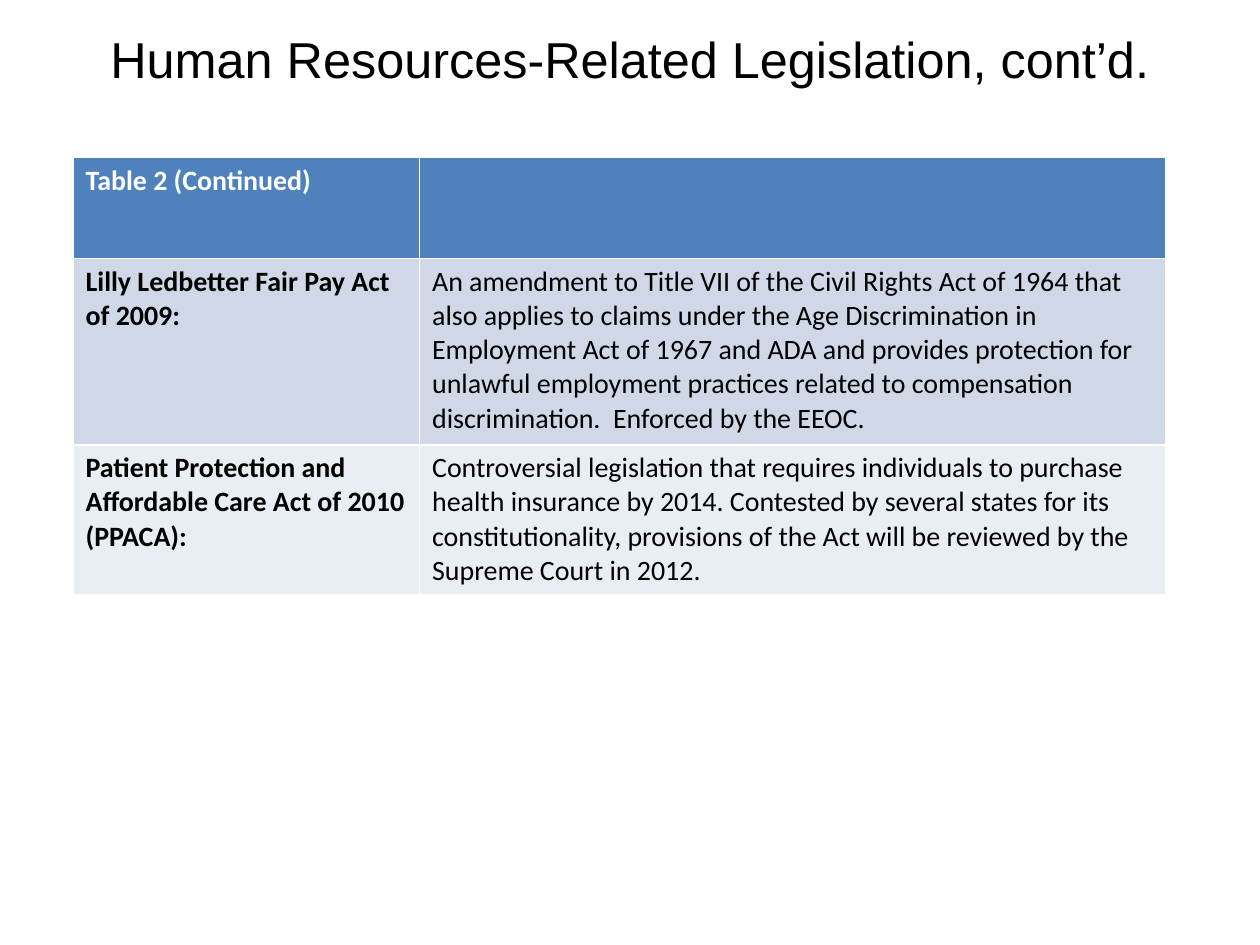
from pptx import Presentation
from pptx.dml.color import RGBColor
from pptx.enum.text import MSO_ANCHOR, MSO_AUTO_SIZE, PP_ALIGN
from pptx.util import Inches, Pt

TITLE = "Human Resources-Related Legislation, cont’d."
ROWS = [
    ("Table 2 (Continued)", ""),
    (
        "Lilly Ledbetter Fair Pay Act of 2009:",
        "An amendment to Title VII of the Civil Rights Act of 1964 that also applies "
        "to claims under the Age Discrimination in Employment Act of 1967 and ADA and "
        "provides protection for unlawful employment practices related to compensation "
        "discrimination.  Enforced by the EEOC.",
    ),
    (
        "Patient Protection and Affordable Care Act of 2010 (PPACA):",
        "Controversial legislation that requires individuals to purchase health "
        "insurance by 2014. Contested by several states for its constitutionality, "
        "provisions of the Act will be reviewed by the Supreme Court in 2012.",
    ),
]
ROW_FILLS = ["4F81BD", "D0D8E8", "E9EDF4"]
ROW_HEIGHTS = [0.8, 1.48, 1.17]
COLUMN_WIDTHS = [2.75, 5.92]
TABLE_LEFT, TABLE_TOP = 0.58, 1.25
SLIDE_WIDTH, SLIDE_HEIGHT = 10, 7.5


def color(hex_value):
    return RGBColor.from_string(hex_value)


def write(frame, text, size=16, font="Calibri", ink="000000", bold=False, align=PP_ALIGN.LEFT):
    frame.text = text
    paragraph = frame.paragraphs[0]
    paragraph.alignment = align
    for styled in (paragraph, *paragraph.runs):
        styled.font.size = Pt(size)
        styled.font.name = font
        styled.font.bold = bold
        styled.font.color.rgb = color(ink)


def add_title(slide):
    title = slide.shapes.title
    title.left, title.top = Inches(SLIDE_WIDTH * 0.05), 0
    title.width, title.height = Inches(SLIDE_WIDTH * 0.9), Inches(0.92)
    frame = title.text_frame
    frame.auto_size = MSO_AUTO_SIZE.NONE
    frame.word_wrap = True
    frame.vertical_anchor = MSO_ANCHOR.MIDDLE
    write(frame, TITLE, size=28.8, font="Arial", align=PP_ALIGN.CENTER)


def add_legislation(slide):
    """Add the table; its default style supplies the white rules."""
    table = slide.shapes.add_table(
        len(ROWS), len(COLUMN_WIDTHS), Inches(TABLE_LEFT), Inches(TABLE_TOP),
        Inches(sum(COLUMN_WIDTHS)), Inches(sum(ROW_HEIGHTS)),
    ).table
    for column, width in zip(table.columns, COLUMN_WIDTHS):
        column.width = Inches(width)
    for r, (texts, fill, height) in enumerate(zip(ROWS, ROW_FILLS, ROW_HEIGHTS)):
        table.rows[r].height = Inches(height)
        for c, text in enumerate(texts):
            cell = table.cell(r, c)
            cell.fill.solid()
            cell.fill.fore_color.rgb = color(fill)
            write(cell.text_frame, text, bold=r == 0 or c == 0,
                  ink="FFFFFF" if r == 0 else "000000")


def main():
    presentation = Presentation()
    presentation.slide_width = Inches(SLIDE_WIDTH)
    presentation.slide_height = Inches(SLIDE_HEIGHT)
    slide = presentation.slides.add_slide(presentation.slide_layouts.get_by_name("Title Only"))
    add_title(slide)
    add_legislation(slide)
    presentation.save("out.pptx")


if __name__ == "__main__":
    main()
